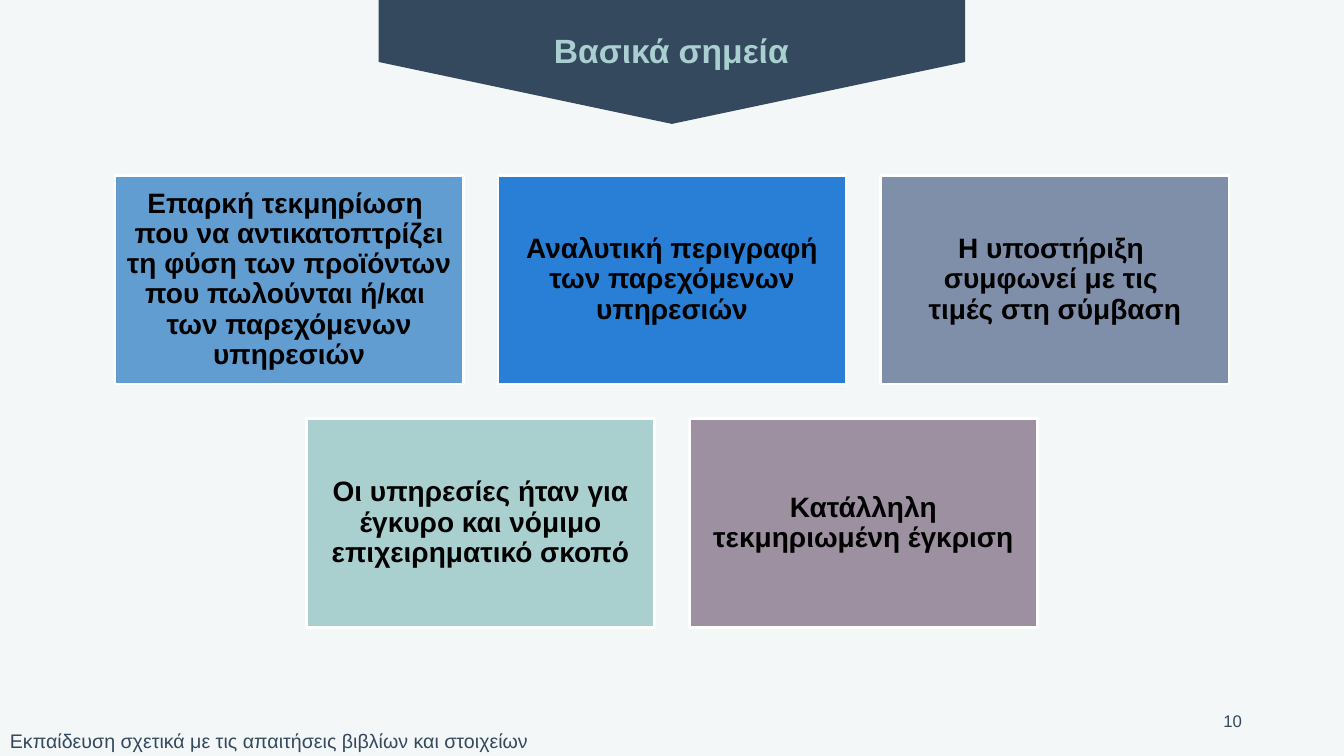
"""Build the key points slide: a pennant title above five centred cards."""
from dataclasses import dataclass
from typing import NamedTuple

from pptx import Presentation
from pptx.dml.color import RGBColor as Rgb
from pptx.enum.shapes import MSO_SHAPE as Kind
from pptx.enum.text import MSO_ANCHOR as Anchor, PP_ALIGN as Align
from pptx.util import Inches, Pt


@dataclass(frozen=True)
class Theme:
    font: str = "Arial"
    back: str = "F4F7F7"
    navy: str = "34495E"
    mint: str = "AACFD0"
    ink: str = "000000"
    edge: str = "FFFFFF"
    head: int = 24
    body: int = 20
    foot: int = 14
    page: int = 12


class Box(NamedTuple):
    left: float
    top: float
    width: float
    height: float


class Style(NamedTuple):
    size: int
    color: str
    bold: bool = False
    align: Align = Align.LEFT
    anchor: Anchor = Anchor.TOP
    side: float = 0.1
    edge: float = 0.05
    pitch: float = 1.0


class Card(NamedTuple):
    fill: str
    lines: tuple[str, ...]


THEME = Theme()
WIDE, HIGH = Inches(13.333), Inches(7.5)
COL, ROW = 2.59, 4.6
SPAN, DEEP, GAP = 10, 6, 1
FIRST = 23.2

PLATE = Box(45.38, -30.6, 9.22, 77.6)
TITLE = Box(22.28, 3.33, 55.35, 6.67)
FOOT = Box(0, 95.73, 40.72, 4.53)
PAGE = Box(70.65, 92.67, 22.5, 5.33)

HEAD = Style(THEME.head, THEME.mint, True, Align.CENTER)
BODY = Style(THEME.body, THEME.ink, True, Align.CENTER, Anchor.MIDDLE, 0.08, 0.08, 0.9)
NOTE = Style(THEME.foot, THEME.navy)
COUNT = Style(THEME.page, THEME.navy, align=Align.RIGHT, anchor=Anchor.MIDDLE)

CARDS = (
    (
        Card("629DD1", (
            "Επαρκή τεκμηρίωση ",
            "που να αντικατοπτρίζει τη φύση των προϊόντων που πωλούνται ή/και ",
            "των παρεχόμενων υπηρεσιών",
        )),
        Card("297FD5", ("Αναλυτική περιγραφή των παρεχόμενων υπηρεσιών",)),
        Card("7F8FA9", ("Η υποστήριξη ", "συμφωνεί με τις ", "τιμές στη σύμβαση")),
    ),
    (
        Card("AACFCF", ("Οι υπηρεσίες ήταν για έγκυρο και νόμιμο επιχειρηματικό σκοπό",)),
        Card("9D90A0", ("Κατάλληλη τεκμηριωμένη έγκριση",)),
    ),
)


def place(box: Box) -> tuple[int, int, int, int]:
    """Turn percentages of the slide into lengths."""
    return (int(WIDE * box.left / 100), int(HIGH * box.top / 100),
            int(WIDE * box.width / 100), int(HIGH * box.height / 100))


def write(shape, lines: tuple[str, ...], style: Style) -> None:
    """Fill a shape with one paragraph, broken into the given lines."""
    frame = shape.text_frame
    frame.word_wrap = True
    frame.vertical_anchor = style.anchor
    frame.margin_left = frame.margin_right = Inches(style.side)
    frame.margin_top = frame.margin_bottom = Inches(style.edge)
    para = frame.paragraphs[0]
    para.alignment = style.align
    para.line_spacing = style.pitch
    for rank, line in enumerate(lines):
        if rank:
            para.add_line_break()
        run = para.add_run()
        run.text = line
        font = run.font
        font.name, font.size, font.bold = THEME.font, Pt(style.size), style.bold
        font.color.rgb = Rgb.from_string(style.color)


def paint(slide, kind: Kind, box: Box, fill: str):
    """Add a flat preset shape without a line."""
    shape = slide.shapes.add_shape(kind, *place(box))
    shape.shadow.inherit = False
    shape.fill.solid()
    shape.fill.fore_color.rgb = Rgb.from_string(fill)
    shape.line.fill.background()
    return shape


def label(slide, box: Box, text: str, style: Style) -> None:
    """Add a text box with a single line."""
    write(slide.shapes.add_textbox(*place(box)), (text,), style)


def banner(slide) -> None:
    """Draw the pennant and lay the title over it."""
    paint(slide, Kind.PENTAGON, PLATE, THEME.navy).rotation = 90
    title = slide.shapes.title
    title.left, title.top, title.width, title.height = place(TITLE)
    write(title, ("Βασικά σημεία",), HEAD)
    slide.shapes._spTree.append(title._element)


def deal(slide) -> None:
    """Draw the cards, each row centred on the slide."""
    for rank, row in enumerate(CARDS):
        total = len(row) * (SPAN + GAP) - GAP
        start = 50 - total * COL / 2
        top = FIRST + rank * (DEEP + GAP) * ROW
        for col, card in enumerate(row):
            left = start + col * (SPAN + GAP) * COL
            box = Box(left, top, SPAN * COL, DEEP * ROW)
            shape = paint(slide, Kind.RECTANGLE, box, card.fill)
            shape.line.color.rgb = Rgb.from_string(THEME.edge)
            shape.line.width = Pt(2)
            write(shape, card.lines, BODY)


def main() -> None:
    """Build and save the slide."""
    deck = Presentation()
    deck.slide_width, deck.slide_height = WIDE, HIGH
    slide = deck.slides.add_slide(deck.slide_layouts[5])
    slide.background.fill.solid()
    slide.background.fill.fore_color.rgb = Rgb.from_string(THEME.back)
    label(slide, FOOT, "Εκπαίδευση σχετικά με τις απαιτήσεις βιβλίων και στοιχείων", NOTE)
    banner(slide)
    label(slide, PAGE, "10", COUNT)
    deal(slide)
    deck.save("out.pptx")


if __name__ == "__main__":
    main()
